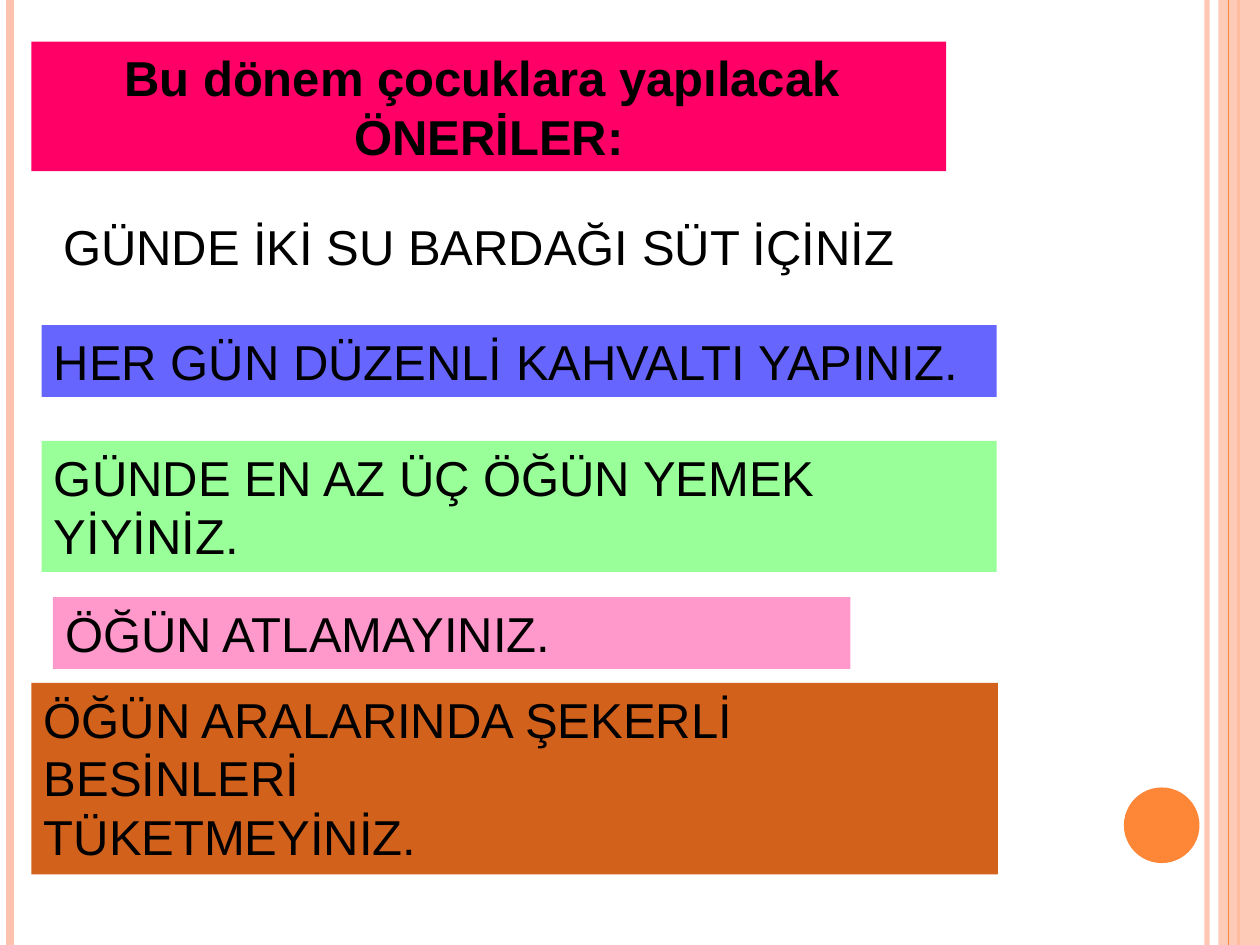
from lxml.etree import SubElement
from pptx import Presentation
from pptx.dml.color import RGBColor
from pptx.enum.shapes import MSO_CONNECTOR as Connector, MSO_SHAPE as Shape
from pptx.enum.text import MSO_ANCHOR as Anchor, MSO_AUTO_SIZE as AutoSize, PP_ALIGN as Align
from pptx.oxml.ns import qn
from pptx.util import Inches, Pt

COLORS = {
    "peach": "FEC3AE", "orange": "FE8637", "black": "000000", "white": "FFFFFF",
    "crimson": "FF0066", "blue": "6666FF", "green": "99FF99", "pink": "FF99CC",
    "rust": "D2611C",
}
TITLE = ["Bu dönem çocuklara yapılacak ", "ÖNERİLER:"]
ADVICE = [
    ((0.33, 1.67, 6.92, 0.57), "white", ["GÜNDE İKİ SU BARDAĞI SÜT İÇİNİZ"], 0.17),
    ((0.33, 2.58, 7.58, 0.57), "blue", ["HER GÜN DÜZENLİ KAHVALTI YAPINIZ."], 0.1),
    ((0.33, 3.5, 7.58, 1.04), "green", ["GÜNDE EN AZ ÜÇ ÖĞÜN YEMEK", "YİYİNİZ."], 0.1),
    ((0.42, 4.74, 6.33, 0.57), "pink", ["ÖĞÜN ATLAMAYINIZ."], 0.1),
    ((0.25, 5.42, 7.67, 1.52), "rust",
     ["ÖĞÜN ARALARINDA ŞEKERLİ BESİNLERİ", "TÜKETMEYİNİZ."], 0.1),
]


def rgb(name):
    """Return the named colour."""
    return RGBColor.from_string(COLORS[name])


def set_opacity(element, percent):
    """Set the opacity of the first colour inside an element."""
    color = next(element.iter(qn("a:srgbClr")))
    SubElement(color, qn("a:alpha"), val=str(percent * 1000))


def add_block(page, kind, box, color):
    """Add a flat filled shape."""
    block = page.shapes.add_shape(kind, *map(Inches, box))
    block.shadow.inherit = False
    block.fill.solid()
    block.fill.fore_color.rgb = rgb(color)
    block.line.fill.background()
    return block


def add_stripe(page, x, top, height, color, width, opacity=100):
    """Add a vertical line."""
    stripe = page.shapes.add_connector(
        Connector.STRAIGHT, Inches(x), Inches(top), Inches(x), Inches(top + height))
    stripe.line.color.rgb = rgb(color)
    stripe.line.width = Pt(width)
    properties = stripe._element.spPr
    if opacity < 100:
        set_opacity(properties, opacity)
    SubElement(properties, qn("a:effectLst"))


def add_frame(page, box):
    """Add the side stripes, the right band and the disc."""
    left, top, width, height = box
    right = left + width
    add_stripe(page, right - 0.42, top, height, "peach", 3, 93)
    add_stripe(page, left + 0.08, top, height, "peach", 4.5)
    add_stripe(page, right - 0.17, top, height, "orange", 1.5)
    band = add_block(page, Shape.RECTANGLE, (right - 0.33, top, 0.33, height), "peach")
    set_opacity(band._element.spPr, 87)
    add_stripe(page, right - 0.25, top, height, "orange", 0.75)
    add_block(page, Shape.OVAL, (right - 1.08, top + height - 1.25, 0.6, 0.6), "orange")


def add_panel(page, box, color, lines, inset=0.1, align=Align.LEFT, bold=False):
    """Add a coloured panel with one paragraph for each line."""
    panel = add_block(page, Shape.RECTANGLE, box, color)
    frame = panel.text_frame
    frame.word_wrap = True
    frame.auto_size = AutoSize.SHAPE_TO_FIT_TEXT
    frame.vertical_anchor = Anchor.TOP
    frame.margin_left = Inches(inset)
    frame.text = "\n".join(lines)
    for para in frame.paragraphs:
        para.alignment = align
        for span in para.runs:
            span.font.name = "Arial"
            span.font.size = Pt(28)
            span.font.bold = bold
            span.font.color.rgb = rgb("black")


def main():
    """Build and save the deck."""
    deck = Presentation()
    deck.slide_width, deck.slide_height = Inches(10), Inches(7.5)
    page = deck.slides.add_slide(deck.slide_layouts[6])
    add_frame(page, (0, 0, 10, 7.5))
    add_panel(page, (0.25, 0.33, 7.26, 1.03), "crimson", TITLE, align=Align.CENTER, bold=True)
    for box, color, lines, inset in ADVICE:
        add_panel(page, box, color, lines, inset)
    deck.save("out.pptx")


if __name__ == "__main__":
    main()
